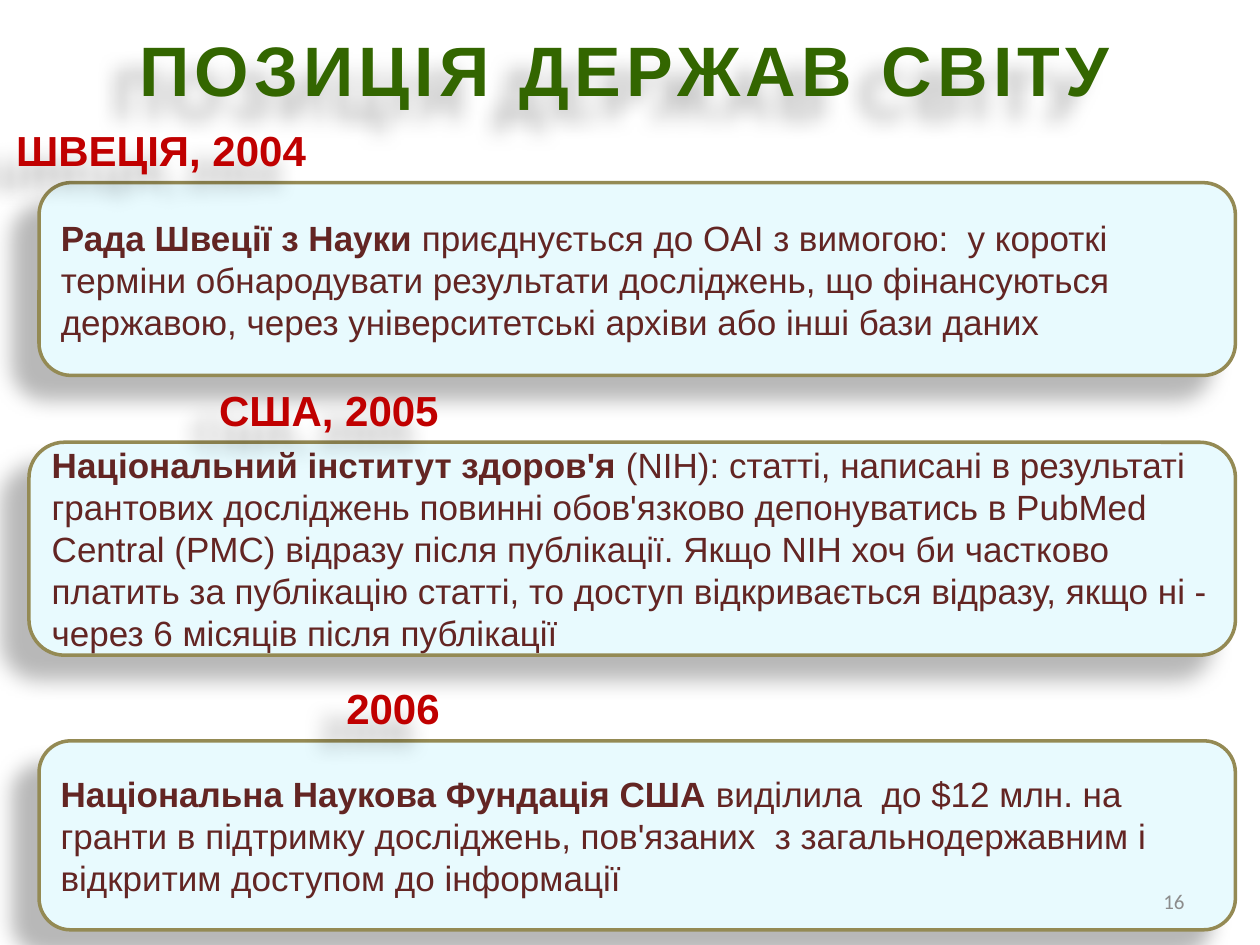
"""Build the slide on the positions of states on open access."""
from dataclasses import dataclass

from lxml.etree import SubElement
from pptx import Presentation
from pptx.dml.color import RGBColor
from pptx.enum.shapes import MSO_SHAPE
from pptx.enum.text import MSO_ANCHOR, MSO_AUTO_SIZE, PP_ALIGN
from pptx.oxml.ns import qn
from pptx.util import Emu, Inches, Pt

GREEN = RGBColor(0x33, 0x66, 0x00)
RED = RGBColor(0xC0, 0x00, 0x00)
BROWN = RGBColor(0x63, 0x25, 0x23)
GREY = RGBColor(0x8C, 0x8C, 0x8C)
PALE = RGBColor(0xE8, 0xFA, 0xFE)
OLIVE = RGBColor(0x94, 0x8A, 0x54)
BLACK = RGBColor(0x00, 0x00, 0x00)

WIDE, HIGH = Inches(10), Inches(7.5)
COLS, ROWS = 100, 75
EDGE = 98.05
GAP = 5.1


@dataclass(frozen=True)
class Area:
    """Place on the grid, in columns and rows."""
    col: float
    row: float
    cols: float
    rows: float

    def rect(self) -> tuple[Emu, ...]:
        """Give left, top, width and height as lengths."""
        x, y = WIDE / COLS, HIGH / ROWS
        return tuple(Emu(round(n)) for n in
                     (self.col * x, self.row * y, self.cols * x, self.rows * y))


@dataclass(frozen=True)
class Entry:
    """A dated heading over a box with a bold lead and a body."""
    head: str
    start: float
    span: float
    left: float
    top: float
    rows: float
    lead: str
    body: str


ITEMS = (
    Entry("ШВЕЦІЯ, 2004", 0.3, 25.2, 3.1, 14.5, 15.3, "Рада Швеції з Науки ",
          "приєднується до OAI з вимогою:  у короткі терміни обнародувати "
          "результати досліджень, що фінансуються державою, через "
          "університетські архіви або інші бази даних"),
    Entry("США, 2005", 16.4, 19.6, 2.3, 35.1, 16.9,
          "Національний інститут здоров'я ",
          "(NIH): статті, написані в результаті грантових досліджень повинні "
          "обов'язково депонуватись в PubMed Central (PMC) відразу після "
          "публікації. Якщо NIH хоч би частково платить за публікацію статті, "
          "то доступ відкривається відразу, якщо ні - через 6 місяців після "
          "публікації"),
    Entry("2006", 26.5, 9.5, 3.1, 58.8, 15, "Національна Наукова Фундація США ",
          "виділила  до $12 млн. на гранти в підтримку досліджень, пов'язаних  "
          "з загальнодержавним і відкритим доступом до інформації"),
)


def shade(shape) -> None:
    """Cast a soft shadow down and to the left."""
    shape.shadow.inherit = False
    group = shape._element.spPr.find(qn("a:effectLst"))
    cast = SubElement(group, qn("a:outerShdw"), blurRad=str(Pt(11.8)),
                      dist=str(Pt(19.7)), dir=str(141 * 60000),
                      algn="tl", rotWithShape="0")
    tint = SubElement(cast, qn("a:srgbClr"), val=str(BLACK))
    SubElement(tint, qn("a:alpha"), val="28000")


def write(shape, text: str, *, size: float, color: RGBColor, bold: bool = False,
          face: str = "Arial", align=PP_ALIGN.LEFT, space: float = 0) -> None:
    """Add a formatted run to the first paragraph of a shape."""
    para = shape.text_frame.paragraphs[0]
    para.alignment = align
    run = para.add_run()
    run.text = text
    font = run.font
    font.name, font.size, font.bold = face, Pt(size), bold
    font.color.rgb = color
    if space:
        run._r.get_or_add_rPr().set("spc", str(round(space * 100)))


def label(slide, area: Area, text: str, *, wrap: bool = True, grow: bool = True,
          cast: bool = True, **form) -> None:
    """Place a text box with one formatted line."""
    box = slide.shapes.add_textbox(*area.rect())
    frame = box.text_frame
    frame.word_wrap = wrap
    if grow:
        frame.auto_size = MSO_AUTO_SIZE.SHAPE_TO_FIT_TEXT
    else:
        frame.vertical_anchor = MSO_ANCHOR.MIDDLE
    write(box, text, **form)
    if cast:
        shade(box)


def panel(slide, item: Entry) -> None:
    """Draw the rounded box of an entry."""
    area = Area(item.left, item.top, EDGE - item.left, item.rows)
    box = slide.shapes.add_shape(MSO_SHAPE.ROUNDED_RECTANGLE, *area.rect())
    box.fill.solid()
    box.fill.fore_color.rgb = PALE
    box.line.color.rgb = OLIVE
    box.line.width = Pt(2)
    shade(box)
    box.text_frame.word_wrap = True
    box.text_frame.vertical_anchor = MSO_ANCHOR.MIDDLE
    write(box, item.lead, size=20, color=BROWN, bold=True)
    write(box, item.body, size=20, color=BROWN)


def main() -> None:
    """Build and save the slide."""
    deck = Presentation()
    deck.slide_width, deck.slide_height = WIDE, HIGH
    slide = deck.slides.add_slide(deck.slide_layouts[6])
    label(slide, Area(3.1, 1.6, 93, 7.7), "ПОЗИЦІЯ ДЕРЖАВ СВІТУ", size=40,
          color=GREEN, bold=True, align=PP_ALIGN.CENTER, space=3)
    for item in ITEMS:
        panel(slide, item)
    for item in ITEMS:
        label(slide, Area(item.start, item.top - GAP, item.span, 5), item.head,
              wrap=False, size=24, color=RED, bold=True)
    label(slide, Area(71.7, 69.5, 23.3, 4), "16", grow=False, cast=False,
          size=12, color=GREY, face="Calibri", align=PP_ALIGN.RIGHT)
    deck.save("out.pptx")


if __name__ == "__main__":
    main()
